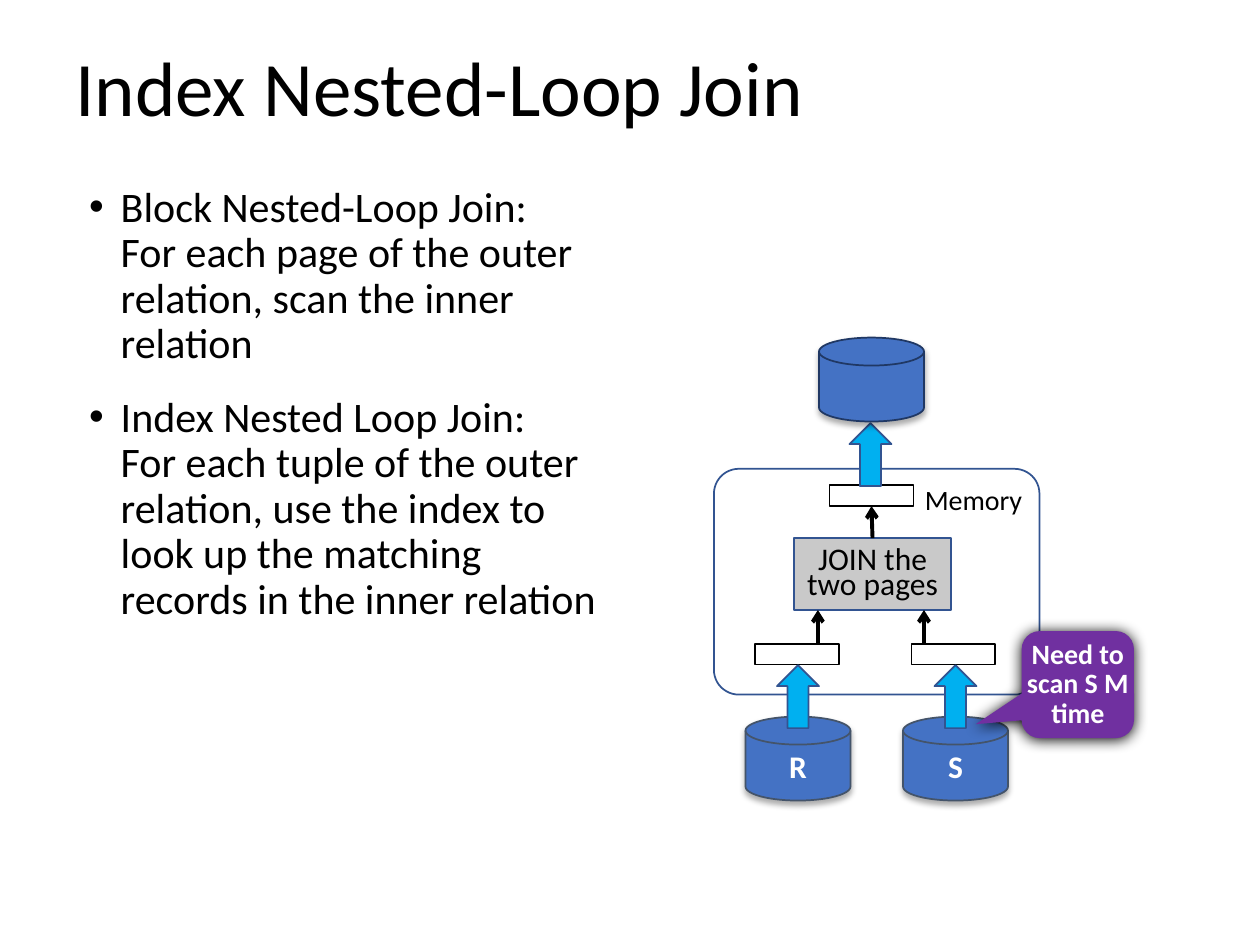
import pptx
import pptx.dml.color
import pptx.enum.shapes
import pptx.enum.text
import pptx.oxml
import pptx.oxml.ns
import pptx.util

SHAPE = pptx.enum.shapes.MSO_SHAPE
ALIGN = pptx.enum.text.PP_ALIGN
ANCHOR = pptx.enum.text.MSO_ANCHOR
AUTO = pptx.enum.text.MSO_AUTO_SIZE
Pt = pptx.util.Pt
COLUMNS, ROWS = 120, 90
BLACK, WHITE, EDGE, SKY, DISK = "000000", "FFFFFF", "325491", "00B0F0", "4472C4"


def color(value):
    return pptx.dml.color.RGBColor.from_string(value)


def element(tag, attributes="", content=""):
    return pptx.oxml.parse_xml(
        f"<a:{tag} {pptx.oxml.ns.nsdecls('a')} {attributes}>{content}</a:{tag}>")


class Painter:
    """Draws on one page, with lengths in grid columns and rows."""

    font = "Calibri"

    def __init__(self, deck, layout):
        self.cell_width = deck.slide_width / COLUMNS
        self.cell_height = deck.slide_height / ROWS
        self.page = deck.slides.add_slide(deck.slide_layouts[layout])

    def place(self, left, top, width, height):
        return (round(left * self.cell_width), round(top * self.cell_height),
                round(width * self.cell_width), round(height * self.cell_height))

    def fill_text(self, box, text, size, ink=BLACK, bold=False, align=None, spacing=None):
        box.text_frame.text = text
        for para in box.text_frame.paragraphs:
            para.alignment = align
            para.line_spacing = spacing
            for span in para.runs:
                span.font.name = self.font
                span.font.size = Pt(size)
                span.font.bold = bold
                span.font.color.rgb = color(ink)

    def placeholder(self, index, cell, text, size, spacing, anchor):
        box = self.page.placeholders[index]
        box.left, box.top, box.width, box.height = self.place(*cell)
        box.text_frame.auto_size = AUTO.NONE
        box.text_frame.vertical_anchor = anchor
        self.fill_text(box, text, size, align=ALIGN.LEFT, spacing=spacing)
        return box

    def bullets(self, cell, items):
        box = self.placeholder(1, cell, "\n".join(items), 24, Pt(26), ANCHOR.TOP)
        indent = pptx.util.Inches(0.25)
        for number, para in enumerate(box.text_frame.paragraphs):
            para.space_before = Pt(10 if number else 0)
            para.space_after = Pt(6)
            properties = para._p.get_or_add_pPr()
            properties.set("marL", str(indent))
            properties.set("indent", str(-indent))
            properties.append(element("buFont", 'typeface="Arial"'))
            properties.append(element("buChar", 'char="•"'))

    def shape(self, kind, cell, fill=None, line=None):
        shape = self.page.shapes.add_shape(kind, *self.place(*cell))
        shape.shadow.inherit = False
        if fill:
            shape.fill.solid()
            shape.fill.fore_color.rgb = color(fill)
        else:
            shape.fill.background()
        if line:
            shape.line.color.rgb = color(line)
            shape.line.width = Pt(1)
        else:
            shape.line.fill.background()
        return shape

    def label(self, shape, text, size, insets=(0.1, 0.05, 0.1, 0.05), **style):
        frame = shape.text_frame
        frame.word_wrap = True
        frame.vertical_anchor = ANCHOR.MIDDLE
        (frame.margin_left, frame.margin_top,
         frame.margin_right, frame.margin_bottom) = map(pptx.util.Inches, insets)
        self.fill_text(shape, text, size, align=ALIGN.CENTER, **style)

    def shade(self, shape, opacity, blur, distance):
        effects = shape._element.spPr.find(pptx.oxml.ns.qn("a:effectLst"))
        effects.append(element(
            "outerShdw",
            f'blurRad="{Pt(blur)}" dist="{Pt(distance)}" dir="5400000" rotWithShape="0"',
            f'<a:srgbClr val="{BLACK}"><a:alpha val="{opacity * 1000}"/></a:srgbClr>'))

    def disk(self, left, top, line, text=None):
        disk = self.shape(SHAPE.FLOWCHART_MAGNETIC_DISK, (left, top, 10, 8), DISK, line)
        self.shade(disk, 32, 3.5, 2.2)
        if text:
            self.label(disk, text, 18, ink=WHITE, bold=True)

    def text(self, cell, text, size):
        box = self.page.shapes.add_textbox(*self.place(*cell))
        box.text_frame.word_wrap = True
        box.text_frame.auto_size = AUTO.SHAPE_TO_FIT_TEXT
        self.fill_text(box, text, size)

    def arrow(self, x, start, end):
        left, top, _, _ = self.place(x, start, 0, 0)
        _, bottom, _, _ = self.place(x, end, 0, 0)
        arrow = self.page.shapes.add_connector(
            pptx.enum.shapes.MSO_CONNECTOR.STRAIGHT, left, top, left, bottom)
        arrow.line.color.rgb = color(BLACK)
        arrow.line.width = Pt(2.25)
        properties = arrow._element.spPr
        properties.get_or_add_ln().append(element("tailEnd", 'type="arrow"'))
        properties.append(element("effectLst"))
        return arrow


def main():
    deck = pptx.Presentation()
    deck.slide_width = pptx.util.Inches(10)
    deck.slide_height = pptx.util.Inches(7.5)
    painter = Painter(deck, 1)

    # Title and list
    painter.placeholder(0, (6, 1.45, 102, 14.5), "Index Nested-Loop Join", 44, 0.9, ANCHOR.MIDDLE)
    painter.bullets((7.3, 17.05, 50.9, 70), [
        "Block Nested-Loop Join:\vFor each page of the outer relation, scan the inner relation",
        "Index Nested Loop Join:\vFor each tuple of the outer relation, use the index to "
        "look up the matching records in the inner relation",
    ])

    # Input relations and memory
    for left, name in ((71, "R"), (86, "S")):
        painter.disk(left, 68.25, "44546A", name)
    memory = painter.shape(SHAPE.ROUNDED_RECTANGLE, (68, 44.65, 31, 21.5), line=EDGE)
    memory.adjustments[0] = 0.11

    # Page buffers: two inputs, then the output
    for left, top in ((71.9, 61.3), (86.8, 61.3), (79, 46.2)):
        buffer = painter.shape(SHAPE.RECTANGLE, (left, top, 8, 2), line=BLACK)

    # Block arrows between disks and buffers
    for left, top in ((74, 63.35), (89, 63.35), (80.9, 40.3)):
        painter.shape(SHAPE.UP_ARROW, (left, top, 4, 6), SKY, EDGE)

    # Join step, fed by both inputs and feeding the output buffer
    join = painter.shape(SHAPE.RECTANGLE, (75.6, 51.25, 15, 6.85), "C9C9C9", EDGE)
    painter.label(join, "JOIN the two pages", 18, (0.1, 0.05, 0.1, 0), spacing=Pt(14))
    for x in (77.9, 88):
        painter.arrow(x, 61.3, 58.1)
    result = painter.arrow(83, 51.25, 48.2)
    result.begin_connect(join, 0)
    result.end_connect(buffer, 2)

    # Output relation, memory label and callout
    painter.disk(78, 32.15, "203864")
    painter.text((86.9, 45.35, 13, 4.45), "Memory", 16)
    callout = painter.shape(SHAPE.ROUNDED_RECTANGULAR_CALLOUT, (97.3, 60.1, 10.7, 10.2), "7030A0")
    for number, value in enumerate((-0.91, 0.37, 0.17)):
        callout.adjustments[number] = value
    painter.shade(callout, 100, 8.5, 1)
    painter.label(callout, "Need to scan S M time", 16, (0, 0.05, 0, 0.05),
                  ink=WHITE, bold=True, spacing=Pt(17))

    deck.save("out.pptx")


if __name__ == "__main__":
    main()
